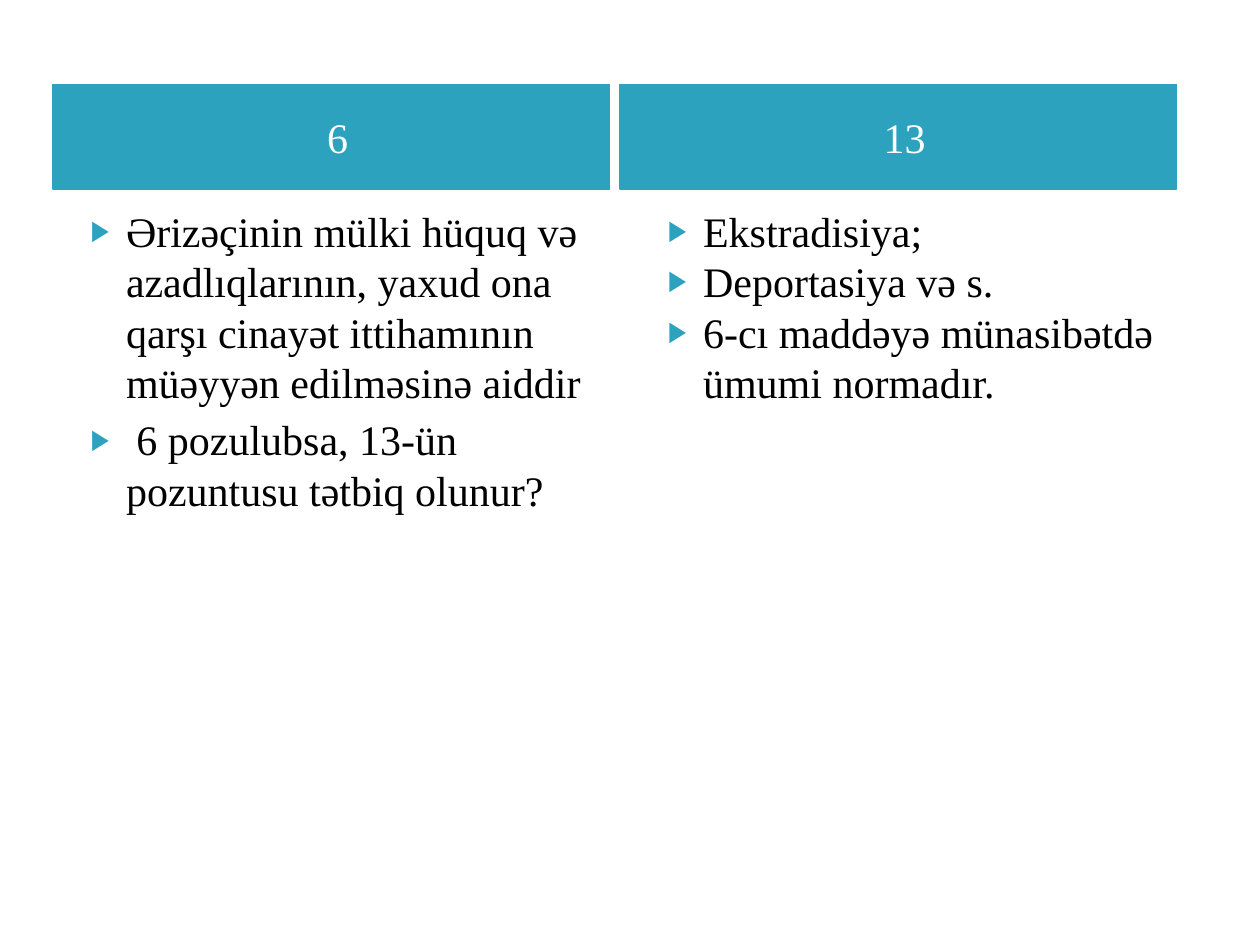
from lxml import etree
from pptx import Presentation
from pptx.dml.color import RGBColor
from pptx.enum.text import MSO_ANCHOR, MSO_AUTO_SIZE, PP_ALIGN
from pptx.oxml.ns import qn
from pptx.util import Inches, Pt

MIDDLE, TOP = MSO_ANCHOR.MIDDLE, MSO_ANCHOR.TOP
CENTER, LEFT = PP_ALIGN.CENTER, PP_ALIGN.LEFT
NO_AUTOFIT = MSO_AUTO_SIZE.NONE
TEAL, WHITE, BLACK = "2DA2BF", "FFFFFF", "000000"
COLUMN_WIDTH = 4.42
COMPARISON_LAYOUT = 4


def rgb(value):
    return RGBColor.from_string(value)


def place(placeholder, box, anchor):
    placeholder.left, placeholder.top, placeholder.width, placeholder.height = map(Inches, box)
    frame = placeholder.text_frame
    frame.word_wrap = True
    frame.auto_size = NO_AUTOFIT
    frame.vertical_anchor = anchor
    return frame


def format_paragraph(paragraph, color, alignment, space_before):
    paragraph.alignment = alignment
    paragraph.space_before = Pt(space_before)
    font = paragraph.font
    font.name = "Times New Roman"
    font.size = Pt(24)
    font.bold = False
    font.color.rgb = rgb(color)


def add_bullet(paragraph):
    properties = paragraph._p.get_or_add_pPr()
    properties.set("marL", str(Inches(0.4)))
    properties.set("indent", str(Inches(-0.28)))
    bullet_color = etree.SubElement(properties, qn("a:buClr"))
    etree.SubElement(bullet_color, qn("a:srgbClr"), val=TEAL)
    etree.SubElement(properties, qn("a:buSzPct"), val="68000")
    etree.SubElement(properties, qn("a:buChar"), char="▶")


def fill_heading(placeholder, box, article):
    frame = place(placeholder, box, MIDDLE)
    frame.margin_left = Inches(0.2)
    placeholder.fill.solid()
    placeholder.fill.fore_color.rgb = rgb(TEAL)
    placeholder.line.color.rgb = rgb(TEAL)
    placeholder.line.width = Pt(0.75)
    frame.text = article
    format_paragraph(frame.paragraphs[0], WHITE, CENTER, 0)


def fill_points(placeholder, box, points, gap):
    frame = place(placeholder, box, TOP)
    frame.text = "\n".join(points)
    for index, paragraph in enumerate(frame.paragraphs):
        add_bullet(paragraph)
        format_paragraph(paragraph, BLACK, LEFT, gap if index else 0)


def build_comparison(slide):
    title = slide.shapes.title
    title._element.getparent().remove(title._element)
    columns = [
        ("6", 0.42, 0.5, 4, [
            "Ərizəçinin mülki hüquq və azadlıqlarının, yaxud ona qarşı "
            "cinayət ittihamının müəyyən edilməsinə aiddir",
            " 6 pozulubsa, 13-ün pozuntusu tətbiq olunur?",
        ]),
        ("13", 4.92, 5.08, 0, [
            "Ekstradisiya;",
            "Deportasiya və s.",
            "6-cı maddəyə münasibətdə ümumi normadır.",
        ]),
    ]
    placeholders = {p.placeholder_format.idx: p for p in slide.placeholders}
    for number, (article, heading_left, points_left, gap, points) in enumerate(columns):
        heading = placeholders[2 * number + 1]
        body = placeholders[2 * number + 2]
        fill_heading(heading, (heading_left, 0.67, COLUMN_WIDTH, 0.83), article)
        fill_points(body, (points_left, 1.58, COLUMN_WIDTH, 4.31), points, gap)


def main():
    presentation = Presentation()
    presentation.slide_width, presentation.slide_height = Inches(10), Inches(7.5)
    slide = presentation.slides.add_slide(presentation.slide_layouts[COMPARISON_LAYOUT])
    build_comparison(slide)
    presentation.save("out.pptx")


if __name__ == "__main__":
    main()
